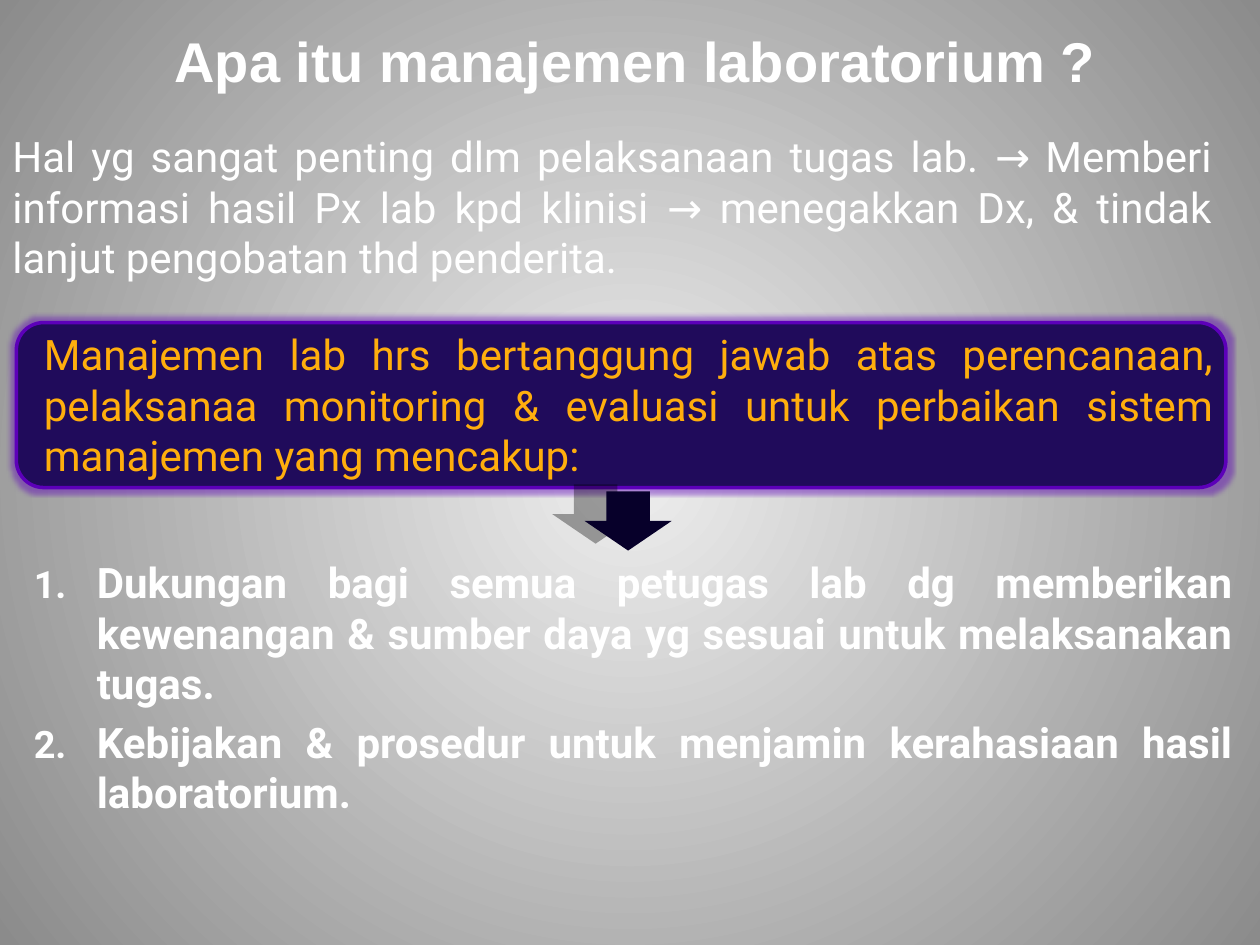
from lxml import etree
from pptx import Presentation
from pptx import util as u
from pptx.dml.color import RGBColor
from pptx.enum import shapes, text
from pptx.oxml import ns

WHITE = RGBColor(0xFF, 0xFF, 0xFF)
AMBER = RGBColor(0xFF, 0xAE, 0x0D)
NAVY = RGBColor(0x20, 0x0B, 0x5B)
PURPLE = RGBColor(0x5C, 0x00, 0xB9)
MIDNIGHT = RGBColor(0x07, 0x00, 0x2A)
BLACK = RGBColor(0, 0, 0)
LIGHT_GREY = RGBColor(0xEE, 0xEE, 0xEE)
DARK_GREY = RGBColor(0x8B, 0x8B, 0x8B)

# Content: position, paragraphs, format
BODY = dict(name="Roboto", size=u.Pt(24))
TITLE = dict(
    at=(0.28, 0.13, 9.53, 0.69),
    lines=["Apa itu manajemen laboratorium ?"],
    font=dict(name="Arial", size=u.Pt(32), bold=True), color=WHITE,
    align=text.PP_ALIGN.CENTER, anchor=text.MSO_ANCHOR.MIDDLE)
PURPOSE = dict(
    at=(0, 0.99, 9.72, 1.8),
    lines=["Hal yg sangat penting dlm pelaksanaan tugas lab. → Memberi informasi hasil "
           "Px lab kpd klinisi → menegakkan Dx, & tindak lanjut pengobatan thd penderita."],
    font=BODY, color=WHITE)
DUTY = dict(
    at=(0.25, 2.56, 9.48, 1.31),
    lines=["Manajemen lab hrs bertanggung jawab atas perencanaan, pelaksanaa monitoring "
           "& evaluasi untuk perbaikan sistem manajemen yang mencakup:"],
    font=BODY, color=AMBER)
SCOPE = dict(
    at=(0.17, 4.37, 9.71, 3.17),
    lines=["Dukungan bagi semua petugas lab dg memberikan kewenangan & sumber daya yg "
           "sesuai untuk melaksanakan tugas.",
           "Kebijakan & prosedur untuk menjamin kerahasiaan hasil laboratorium."],
    font=dict(BODY, bold=True), color=WHITE, numbered=True)


def add_xml(parent, tag, **attributes):
    return etree.SubElement(parent, ns.qn(tag), {k: str(v) for k, v in attributes.items()})


def add_color(parent, color, alpha):
    add_xml(add_xml(parent, "a:srgbClr", val=color), "a:alpha", val=alpha * 1000)


def add_number(paragraph):
    props = paragraph._p.get_or_add_pPr()
    props.set("marL", str(u.Inches(0.5)))
    props.set("indent", str(u.Inches(-0.5)))
    add_xml(add_xml(props, "a:buClr"), "a:srgbClr", val=WHITE)
    add_xml(props, "a:buSzPct", val=90000)
    add_xml(props, "a:buFont", typeface="Roboto")
    add_xml(props, "a:buAutoNum", type="arabicPeriod")


def add_text(slide, at, lines, font, color, align=text.PP_ALIGN.JUSTIFY,
             anchor=text.MSO_ANCHOR.TOP, numbered=False):
    frame = slide.shapes.add_textbox(*map(u.Inches, at)).text_frame
    frame.word_wrap = True
    frame.vertical_anchor = anchor
    for i, line in enumerate(lines):
        paragraph = frame.paragraphs[0] if i == 0 else frame.add_paragraph()
        paragraph.alignment = align
        if i:
            paragraph.space_before = u.Pt(4.8)
        if numbered:
            add_number(paragraph)
        run = paragraph.add_run()
        run.text = line
        for key, value in font.items():
            setattr(run.font, key, value)
        run.font.color.rgb = color


def add_panel(slide, preset, at, fill):
    panel = slide.shapes.add_shape(preset, *map(u.Inches, at))
    panel.fill.solid()
    panel.fill.fore_color.rgb = fill
    panel.line.fill.background()
    panel.shadow.inherit = False
    return panel, panel._element.spPr.find(ns.qn("a:effectLst"))


def set_background(slide):
    fill = slide.background.fill
    fill.gradient()
    for stop, color in zip(fill.gradient_stops, (LIGHT_GREY, DARK_GREY)):
        stop.color.rgb = color
    fill.gradient_stops[0].position, fill.gradient_stops[1].position = 0, 1
    gradient = slide._element.find(".//" + ns.qn("a:gradFill"))
    gradient.remove(gradient.find(ns.qn("a:lin")))
    circle = add_xml(gradient, "a:path", path="circle")
    add_xml(circle, "a:fillToRect", l=50000, t=50000, r=50000, b=50000)


def main():
    deck = Presentation()
    deck.slide_width, deck.slide_height = u.Inches(10), u.Inches(7.5)
    slide = deck.slides.add_slide(deck.slide_layouts[6])
    set_background(slide)

    # Glowing panel behind the duty statement
    panel, effects = add_panel(slide, shapes.MSO_SHAPE.FLOWCHART_ALTERNATE_PROCESS,
                               (0.13, 2.56, 9.6, 1.31), NAVY)
    panel.line.color.rgb = PURPLE
    panel.line.width = u.Pt(2)
    add_color(add_xml(effects, "a:glow", rad=u.Pt(5)), PURPLE, 45)

    for block in (TITLE, PURPOSE, DUTY, SCOPE):
        add_text(slide, **block)

    # Arrow to the list, with its shadow up and to the left
    arrow, effects = add_panel(slide, shapes.MSO_SHAPE.DOWN_ARROW,
                               (4.64, 3.9, 0.69, 0.47), MIDNIGHT)
    shadow = add_xml(effects, "a:outerShdw", blurRad=0, dist=u.Pt(19),
                     dir=192 * 60000, algn="ctr", rotWithShape=0)
    add_color(shadow, BLACK, 35)

    deck.save("out.pptx")


if __name__ == "__main__":
    main()
